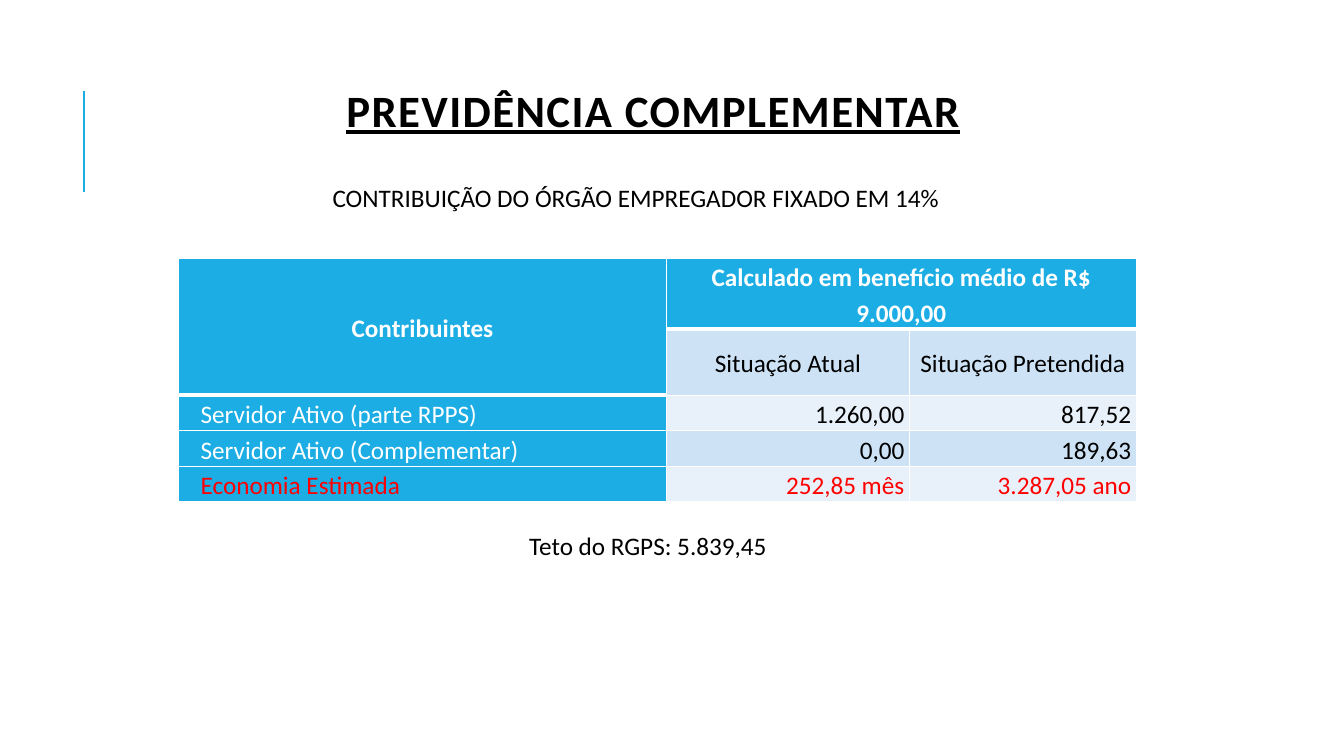
from lxml import etree
from pptx import Presentation
from pptx import util as u
from pptx.dml.color import RGBColor
from pptx.enum import shapes, text
from pptx.oxml.ns import qn

TITLE = "PREVIDÊNCIA COMPLEMENTAR"
NOTES = [  # text, left, top, width, height
    ("CONTRIBUIÇÃO DO ÓRGÃO EMPREGADOR FIXADO EM 14%", 3.2, 1.76, 6.56, 0.71),
    ("Teto do RGPS: 5.839,45", 5.15, 5.21, 2.66, 0.4),
]
ROWS = [
    ("Contribuintes", "Calculado em benefício médio de R$ 9.000,00", ""),
    ("", "Situação Atual", "Situação Pretendida"),
    ("Servidor Ativo (parte RPPS)", "1.260,00", "817,52"),
    ("Servidor Ativo (Complementar)", "0,00", "189,63"),
    ("Economia Estimada", "252,85 mês", "3.287,05 ano"),
]
COLUMN_WIDTHS = [4.84, 2.41, 2.25]
ROW_HEIGHTS = [0.66, 0.66, 0.32, 0.32, 0.32]
FONT = "Calibri"
BLUE, BAND_DARK, BAND_LIGHT = "1CADE4", "CDE3F5", "E8F1FA"
WHITE, BLACK, RED = "FFFFFF", "000000", "FF0000"
ALIGN, ANCHOR = text.PP_ALIGN, text.MSO_ANCHOR


def color(value):
    return RGBColor.from_string(value)


def add_text(para, words, size, shade, bold=False):
    span = para.add_run()
    span.text = words
    span.font.name = FONT
    span.font.size = u.Pt(size)
    span.font.bold = bold
    span.font.color.rgb = color(shade)
    return span


def set_borders(cell, widths):
    """Draw white cell edges; widths are points for left, right, top, bottom."""
    props = cell._tc.get_or_add_tcPr()
    for index, (side, width) in enumerate(zip("LRTB", widths)):
        edge = etree.Element(qn(f"a:ln{side}"), w=str(u.Pt(width)))
        fill = etree.SubElement(edge, qn("a:solidFill"))
        etree.SubElement(fill, qn("a:srgbClr"), val=WHITE)
        props.insert(index, edge)


def fill_cell(cell, row, col, words):
    header, label = row == 0, col == 0
    cell.fill.solid()
    band = BAND_DARK if row % 2 else BAND_LIGHT
    cell.fill.fore_color.rgb = color(BLUE if header or label else band)
    cell.margin_left = cell.margin_right = u.Inches(0.05)
    cell.margin_top = cell.margin_bottom = 0
    figure = row > 1 and not label
    cell.vertical_anchor = ANCHOR.BOTTOM if figure else ANCHOR.MIDDLE

    # The thick rule runs under the header: row 1 in the label column, row 0 elsewhere
    rule_row = 1 if label else 0
    set_borders(cell, (1, 1, 3 if row == rule_row + 1 else 1,
                       3 if row == rule_row or header else 1))
    if not words:
        return
    para = cell.text_frame.paragraphs[0]
    para.line_spacing = 1.15
    para.alignment = ALIGN.CENTER if row < 2 else ALIGN.RIGHT if figure else ALIGN.LEFT
    if label and row > 1:
        para._p.get_or_add_pPr().set("indent", str(u.Inches(0.17)))
    shade = RED if row == len(ROWS) - 1 else WHITE if header or label else BLACK
    add_text(para, words, 18, shade, bold=header)


def main():
    deck = Presentation()
    deck.slide_width, deck.slide_height = u.Inches(13.33), u.Inches(7.5)
    page = deck.slides.add_slide(deck.slide_layouts[5])

    # Accent line
    accent = page.shapes.add_connector(
        shapes.MSO_CONNECTOR.STRAIGHT,
        u.Inches(0.83), u.Inches(1.9), u.Inches(0.83), u.Inches(0.9))
    accent.line.color.rgb = color(BLUE)
    accent.line.width = u.Pt(1.5)
    etree.SubElement(accent._element.spPr, qn("a:effectLst"))

    # Title
    title = page.shapes.title
    title.left, title.top = u.Inches(0.98), u.Inches(0.69)
    title.width, title.height = u.Inches(11), u.Inches(0.89)
    frame = title.text_frame
    frame.auto_size = text.MSO_AUTO_SIZE.NONE
    frame.vertical_anchor = ANCHOR.MIDDLE
    para = frame.paragraphs[0]
    para.alignment = ALIGN.CENTER
    para.line_spacing = 0.8
    span = add_text(para, TITLE, 32, BLACK, bold=True)
    span.font.underline = True
    span._r.get_or_add_rPr().set("spc", "100")

    # Contribution table
    table = page.shapes.add_table(
        len(ROWS), len(COLUMN_WIDTHS), u.Inches(1.77), u.Inches(2.56),
        u.Inches(sum(COLUMN_WIDTHS)), u.Inches(sum(ROW_HEIGHTS))).table
    for column, width in zip(table.columns, COLUMN_WIDTHS):
        column.width = u.Inches(width)
    for line, height in zip(table.rows, ROW_HEIGHTS):
        line.height = u.Inches(height)
    table.cell(0, 0).merge(table.cell(1, 0))
    table.cell(0, 1).merge(table.cell(0, 2))
    for row, entries in enumerate(ROWS):
        for col, words in enumerate(entries):
            fill_cell(table.cell(row, col), row, col, words)

    # Lines above and below the table
    for words, *place in NOTES:
        box = page.shapes.add_textbox(*(u.Inches(length) for length in place))
        box.text_frame.word_wrap = True
        add_text(box.text_frame.paragraphs[0], words, 18, BLACK)

    deck.save("out.pptx")


if __name__ == "__main__":
    main()
